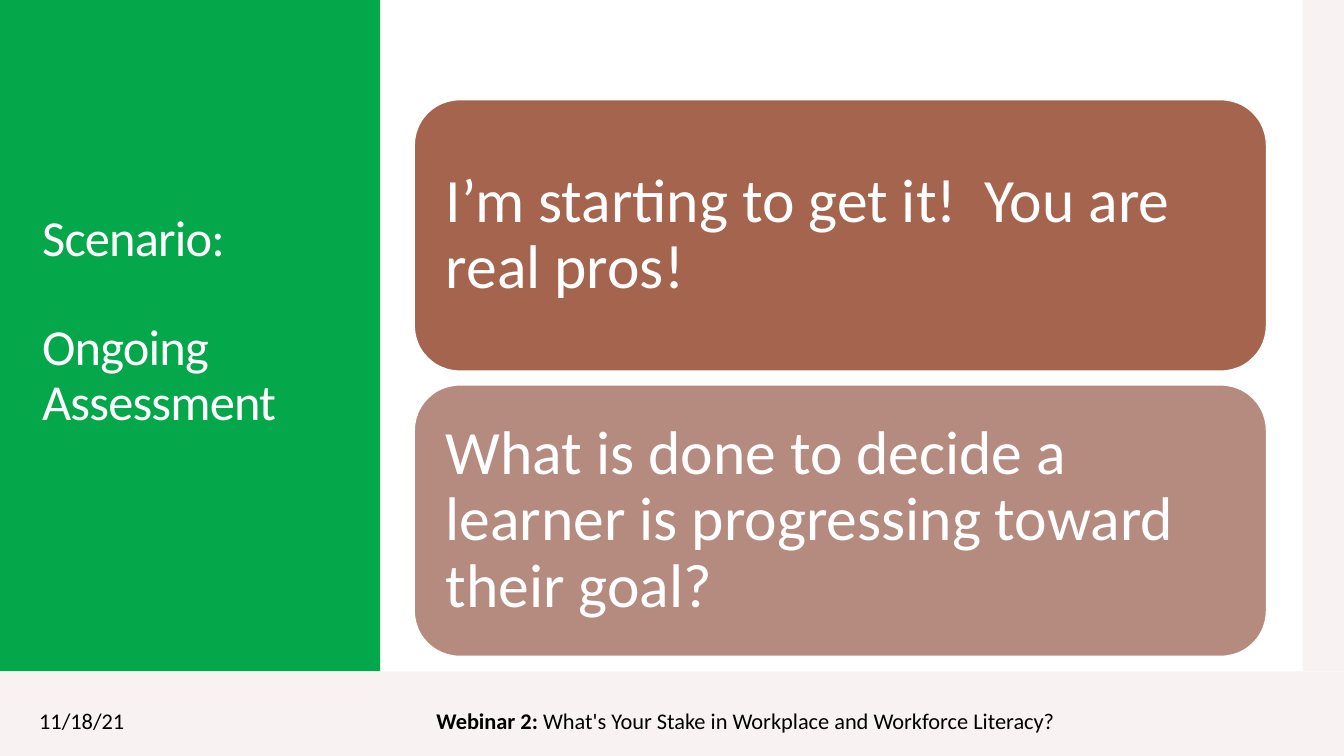
import pptx
import pptx.util
import pptx.dml.color
import pptx.enum.shapes
import pptx.enum.text

Inches = pptx.util.Inches
Pt = pptx.util.Pt
SHAPES = pptx.enum.shapes.MSO_SHAPE


def color(hex_string):
    return pptx.dml.color.RGBColor.from_string(hex_string)


class SlideBuilder:
    font_name = "Calibri"

    def __init__(self, slide):
        self.slide = slide

    def block(self, left, top, width, height, fill, preset=SHAPES.RECTANGLE):
        block = self.slide.shapes.add_shape(
            preset, Inches(left), Inches(top), Inches(width), Inches(height))
        block.shadow.inherit = False
        block.fill.solid()
        block.fill.fore_color.rgb = color(fill)
        block.line.fill.background()
        return block

    def card(self, left, top, width, height, fill, statement):
        card = self.block(left, top, width, height, fill, SHAPES.ROUNDED_RECTANGLE)
        card.line.color.rgb = color("FFFFFF")
        card.line.width = Pt(0.85)
        self.fill_text(card.text_frame, [[(statement, False)]], 44, "FFFFFF",
                       side=0.18, edge=0.18, line_spacing=0.9)

    def text(self, left, top, width, height, paragraphs, size, ink, **style):
        box = self.slide.shapes.add_textbox(
            Inches(left), Inches(top), Inches(width), Inches(height))
        self.fill_text(box.text_frame, paragraphs, size, ink, **style)

    def fill_text(self, frame, paragraphs, size, ink, side=0.1, edge=0.05,
                  line_spacing=1.0, gap=0, tracking=0):
        frame.word_wrap = True
        frame.vertical_anchor = pptx.enum.text.MSO_ANCHOR.MIDDLE
        frame.margin_left = frame.margin_right = Inches(side)
        frame.margin_top = frame.margin_bottom = Inches(edge)
        for index, parts in enumerate(paragraphs):
            paragraph = frame.add_paragraph() if index else frame.paragraphs[0]
            paragraph.alignment = pptx.enum.text.PP_ALIGN.LEFT
            paragraph.line_spacing = line_spacing
            paragraph.space_before = Pt(gap if index else 0)
            paragraph.font.name = self.font_name
            paragraph.font.size = Pt(size)
            paragraph.font.color.rgb = color(ink)
            for words, bold in parts:
                run = paragraph.add_run()
                run.text = words
                if bold:
                    run.font.bold = True
                if tracking:
                    run._r.get_or_add_rPr().set("spc", str(round(tracking * 100)))


def main():
    presentation = pptx.Presentation()
    presentation.slide_width = Inches(13.33)
    presentation.slide_height = Inches(7.5)
    builder = SlideBuilder(presentation.slides.add_slide(presentation.slide_layouts[6]))

    builder.block(-0.04, 6.66, 13.38, 0.85, "F8F3F2")
    builder.block(0, 0, 3.77, 6.66, "04A84A")
    builder.block(12.92, 0, 0.42, 6.66, "F8F3F2")

    builder.text(0.29, 6.95, 3, 0.4, [[("11/18/21", False)]], 16, "000000")
    webinar = [("Webinar 2: ", True),
               ("What's Your Stake in Workplace and Workforce Literacy?", False)]
    builder.text(4.23, 6.95, 6.46, 0.4, [webinar], 16, "000000")

    scenario = [[("Scenario:", False)], [("Ongoing Assessment", False)]]
    builder.text(0.32, 0.68, 3.22, 5.03, scenario, 36, "FFFFFF",
                 line_spacing=0.9, gap=39, tracking=-0.6)

    statements = [
        ("A5644E", "I’m starting to get it!  You are real pros!"),
        ("B58B80", "What is done to decide a learner is progressing toward their goal?"),
    ]
    for row, (fill, statement) in enumerate(statements):
        builder.card(4.11, 0.99 + row * 2.83, 8.45, 2.69, fill, statement)

    presentation.save("out.pptx")


if __name__ == "__main__":
    main()
